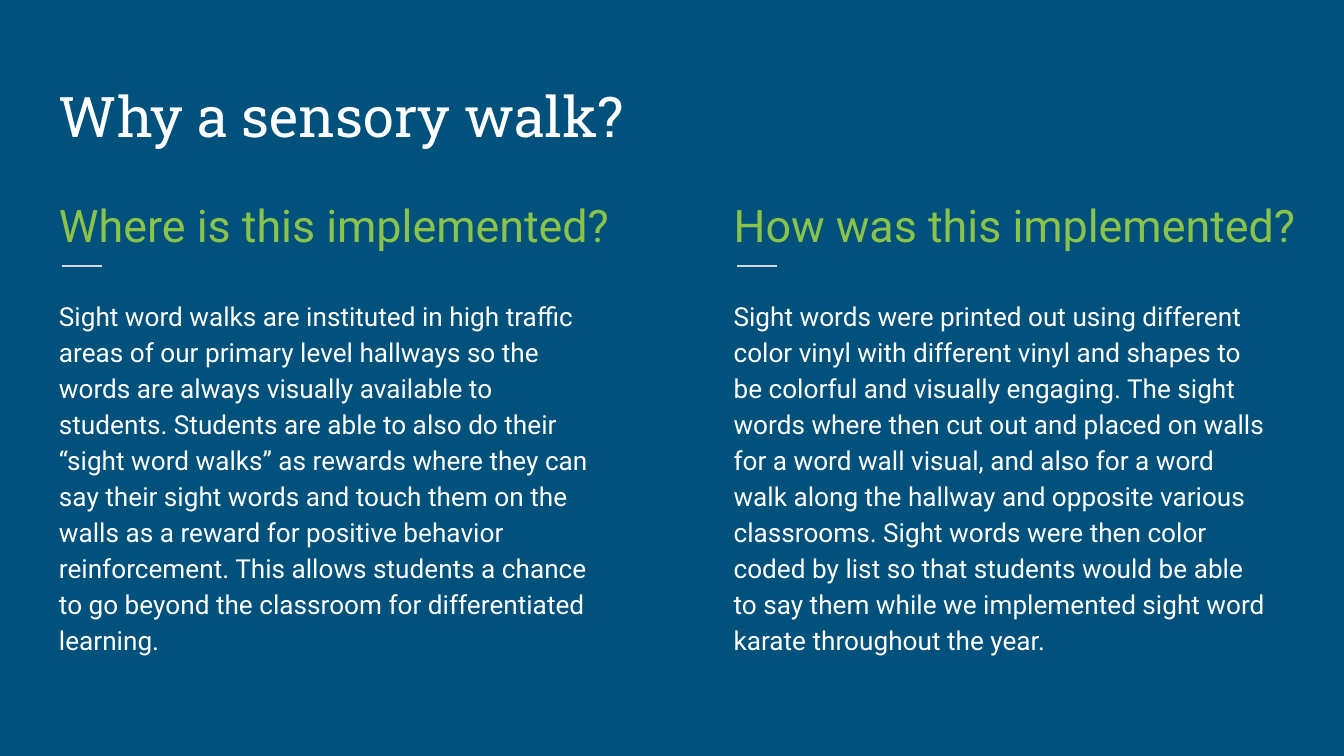
from dataclasses import dataclass

from lxml.etree import SubElement
from pptx import Presentation
from pptx.dml.color import RGBColor
from pptx.enum.shapes import MSO_CONNECTOR as Connector
from pptx.enum.text import MSO_ANCHOR as Anchor
from pptx.oxml.ns import qn
from pptx.util import Inches, Pt


@dataclass(frozen=True)
class Theme:
    background: str = "00517C"
    text: str = "FFFFFF"
    heading: str = "8BC34A"
    rule: str = "CFD8DC"
    title_font: str = "Roboto Slab"
    body_font: str = "Roboto"
    title_size: float = 30
    heading_size: float = 24
    body_size: float = 14
    rule_width: float = 0.75
    inset: float = 0.1


COLUMNS = [
    (0.34, "Where is this implemented?",
     "Sight word walks are instituted in high traffic areas of our primary level "
     "hallways so the words are always visually available to students. Students are "
     "able to also do their “sight word walks” as rewards where they can say their "
     "sight words and touch them on the walls as a reward for positive behavior "
     "reinforcement. This allows students a chance to go beyond the classroom for "
     "differentiated learning."),
    (5.36, "How was this implemented?",
     "Sight words were printed out using different color vinyl with different vinyl "
     "and shapes to be colorful and visually engaging. The sight words where then cut "
     "out and placed on walls for a word wall visual, and also for a word walk along "
     "the hallway and opposite various classrooms. Sight words were then color coded "
     "by list so that students would be able to say them while we implemented sight "
     "word karate throughout the year."),
]


def write_text(frame, text, *, font, size, color, line_spacing=None, space_after=None):
    para = frame.paragraphs[0]
    para.line_spacing = line_spacing
    if space_after is not None:
        para.space_after = Pt(space_after)
    span = para.add_run()
    span.text = text
    span.font.name = font
    span.font.size = Pt(size)
    span.font.color.rgb = RGBColor.from_string(color)


class Page:
    def __init__(self, slide, theme):
        self.slide = slide
        self.theme = theme
        fill = slide.background.fill
        fill.solid()
        fill.fore_color.rgb = RGBColor.from_string(theme.background)

    def text_box(self, text, left, top, width, height, anchor=Anchor.TOP, **text_format):
        box = self.slide.shapes.add_textbox(*map(Inches, (left, top, width, height)))
        frame = box.text_frame
        frame.word_wrap = True
        frame.vertical_anchor = anchor
        frame.margin_left = frame.margin_right = Inches(self.theme.inset)
        frame.margin_top = frame.margin_bottom = Inches(self.theme.inset)
        write_text(frame, text, **text_format)

    def title(self, text):
        theme = self.theme
        self.text_box(text, 0.34, 0.41, 9.32, 0.8, Anchor.BOTTOM,
                      font=theme.title_font, size=theme.title_size, color=theme.text)

    def rule(self, left, top, length):
        line = self.slide.shapes.add_connector(
            Connector.STRAIGHT, *map(Inches, (left, top, left + length, top)))
        line.line.color.rgb = RGBColor.from_string(self.theme.rule)
        line.line.width = Pt(self.theme.rule_width)
        SubElement(line._element.spPr, qn("a:effectLst"))

    def column(self, left, heading, body):
        """Stack a heading, a short rule and a body text at one left edge."""
        theme = self.theme
        shared = dict(font=theme.body_font, line_spacing=1.15, space_after=16)
        self.text_box(heading, left, 1.31, 4.52, 0.57,
                      size=theme.heading_size, color=theme.heading, **shared)
        self.rule(left + 0.12, 1.98, 0.3)
        self.text_box(body, left, 2.1, 4.21, 3.01,
                      size=theme.body_size, color=theme.text, **shared)


def main():
    deck = Presentation()
    deck.slide_width = Inches(10)
    deck.slide_height = deck.slide_width * 9 // 16
    page = Page(deck.slides.add_slide(deck.slide_layouts[6]), Theme())
    page.title("Why a sensory walk?")
    for left, heading, body in COLUMNS:
        page.column(left, heading, body)
    deck.save("out.pptx")


if __name__ == "__main__":
    main()
